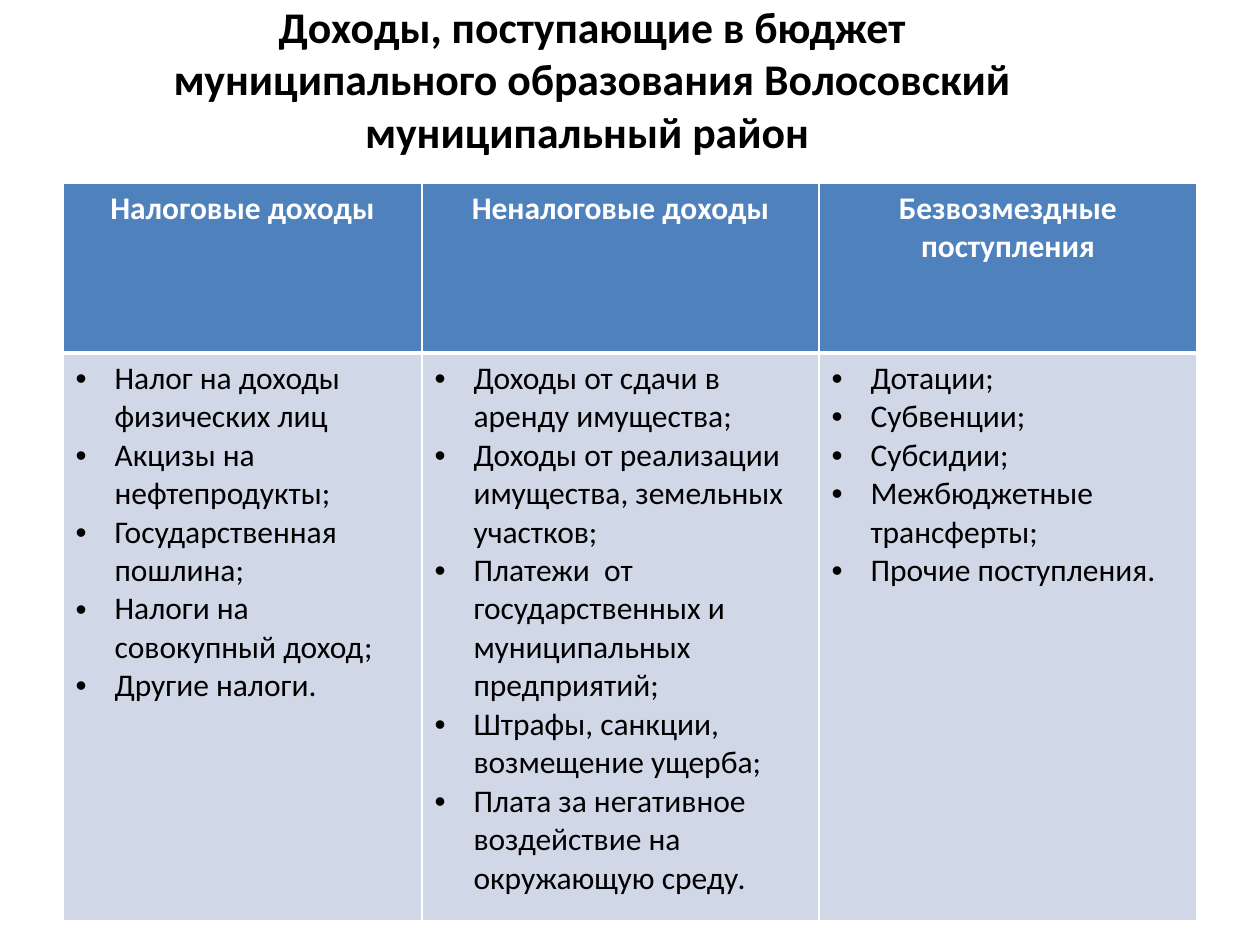
import copy

import pptx
import pptx.dml.color
import pptx.enum.text
import pptx.oxml
import pptx.oxml.ns
import pptx.util

EMU_PER_PX = 914400 / 126
FONT = "Calibri"
ALIGN = pptx.enum.text.PP_ALIGN

TITLE = (" Доходы, поступающие в бюджет \v"
         "муниципального образования Волосовский муниципальный район ")
INCOME = {
    "Налоговые доходы": [
        "Налог на доходы физических лиц",
        "Акцизы на нефтепродукты;",
        "Государственная пошлина;",
        "Налоги на совокупный доход;",
        "Другие налоги.",
    ],
    "Неналоговые доходы": [
        "Доходы от сдачи в аренду имущества;",
        "Доходы от реализации имущества, земельных участков;",
        "Платежи  от государственных и муниципальных предприятий;",
        "Штрафы, санкции, возмещение ущерба;",
        "Плата за негативное воздействие на окружающую среду.",
    ],
    "Безвозмездные поступления": [
        "Дотации;",
        "Субвенции;",
        "Субсидии;",
        "Межбюджетные трансферты;",
        "Прочие поступления.",
    ],
}


def px(length):
    return pptx.util.Emu(round(length * EMU_PER_PX))


def color(hex_value):
    return pptx.dml.color.RGBColor.from_string(hex_value)


def format_runs(paragraph, size, hex_value, bold):
    for run in paragraph.runs:
        run.font.name = FONT
        run.font.size = pptx.util.Pt(size)
        run.font.bold = bold
        run.font.color.rgb = color(hex_value)


def add_bullet(paragraph, indent):
    properties = paragraph._p.get_or_add_pPr()
    properties.set("marL", str(px(indent)))
    properties.set("indent", str(-px(indent)))
    for tag, attribute, value in (("buFont", "typeface", "Arial"), ("buChar", "char", "•")):
        bullet = pptx.oxml.parse_xml(
            f'<a:{tag} {pptx.oxml.ns.nsdecls("a")} {attribute}="{value}"/>')
        properties.append(bullet)


def style_cell(cell, fill, top, bottom):
    """Draw white borders (widths in points), then fill the cell."""
    properties = cell._tc.get_or_add_tcPr()
    for side, width in (("L", 1), ("R", 1), ("T", top), ("B", bottom)):
        properties.append(pptx.oxml.parse_xml(
            f'<a:ln{side} {pptx.oxml.ns.nsdecls("a")} w="{pptx.util.Pt(width)}">'
            f'<a:solidFill><a:srgbClr val="FFFFFF"/></a:solidFill></a:ln{side}>'))
    cell.fill.solid()
    cell.fill.fore_color.rgb = color(fill)


def place_title(slide, left, top, width, height):
    title = slide.shapes.title
    title.left, title.top, title.width, title.height = map(px, (left, top, width, height))
    frame = title.text_frame
    frame.text = TITLE
    frame.word_wrap = True
    frame.auto_size = pptx.enum.text.MSO_AUTO_SIZE.NONE
    frame.vertical_anchor = pptx.enum.text.MSO_ANCHOR.MIDDLE
    frame.margin_bottom = px(59)  # lifts the heading clear of the table
    heading = frame.paragraphs[0]
    heading.alignment = ALIGN.CENTER
    format_runs(heading, 25, "000000", True)
    # The line break takes the size of the text around it
    for line_break in heading._p.findall(pptx.oxml.ns.qn("a:br")):
        line_break.append(copy.deepcopy(heading.runs[0]._r.rPr))


def place_income_table(slide, left, top, column_widths, row_heights):
    table = slide.shapes.add_table(
        len(row_heights), len(column_widths), px(left), px(top),
        px(sum(column_widths)), px(sum(row_heights))).table
    for row, height in zip(table.rows, row_heights):
        row.height = px(height)

    for index, (kind, sources) in enumerate(INCOME.items()):
        table.columns[index].width = px(column_widths[index])

        # Kind of income
        header = table.cell(0, index)
        header.text_frame.text = kind
        header.text_frame.paragraphs[0].alignment = ALIGN.CENTER
        format_runs(header.text_frame.paragraphs[0], 18, "FFFFFF", True)
        style_cell(header, "4F81BD", top=1, bottom=3)

        # Its sources
        body = table.cell(1, index)
        body.text_frame.text = "\n".join(sources)
        for source in body.text_frame.paragraphs:
            add_bullet(source, 39)
            format_runs(source, 18, "000000", False)
        style_cell(body, "D0D8E8", top=3, bottom=1)


def main():
    deck = pptx.Presentation()
    deck.slide_width, deck.slide_height = px(1260), px(945)
    slide = deck.slides.add_slide(deck.slide_layouts[5])
    place_title(slide, 25, 36, 1134, 137)
    place_income_table(slide, 63, 183, (359, 397, 378), (170, 568))
    deck.save("out.pptx")


if __name__ == "__main__":
    main()
